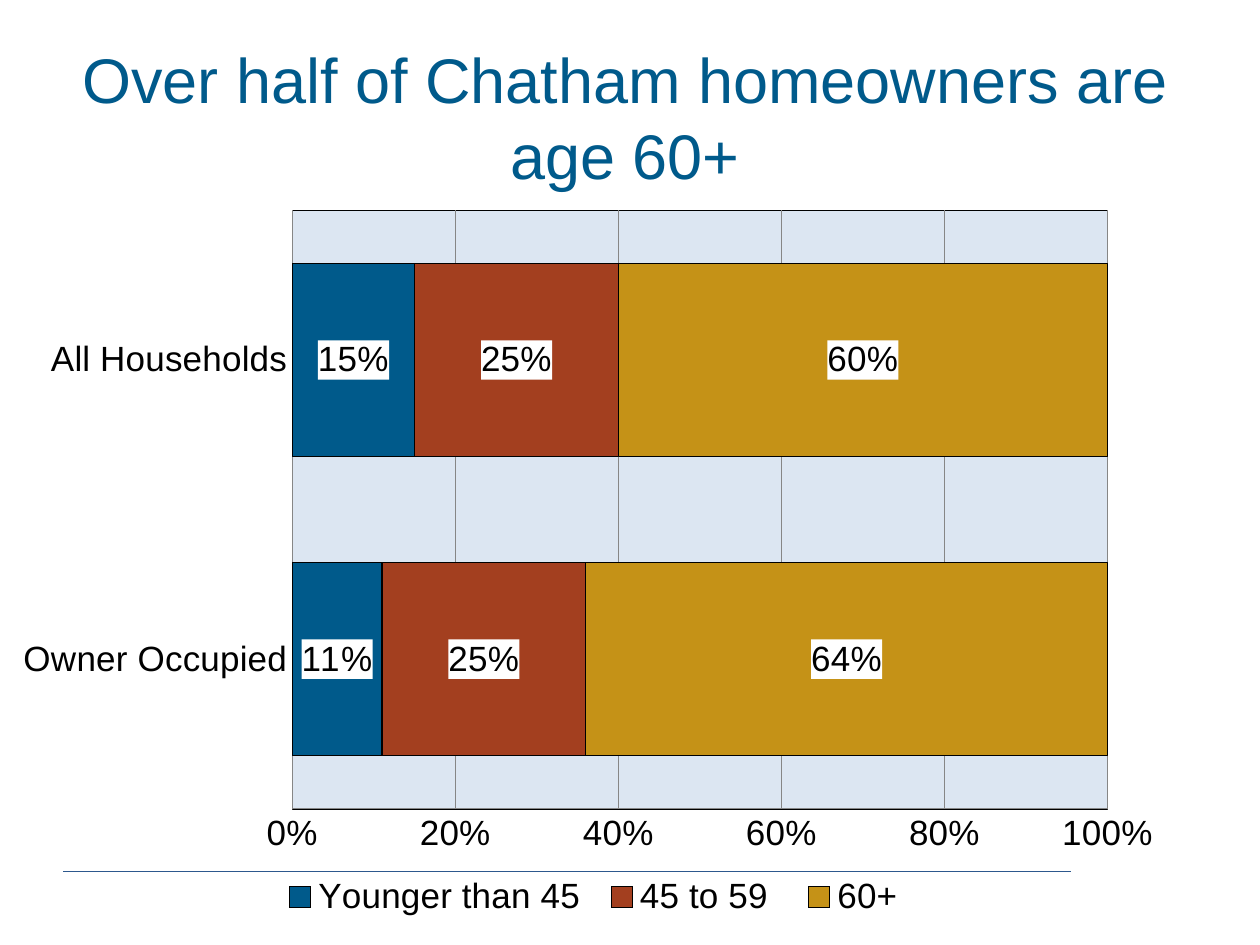
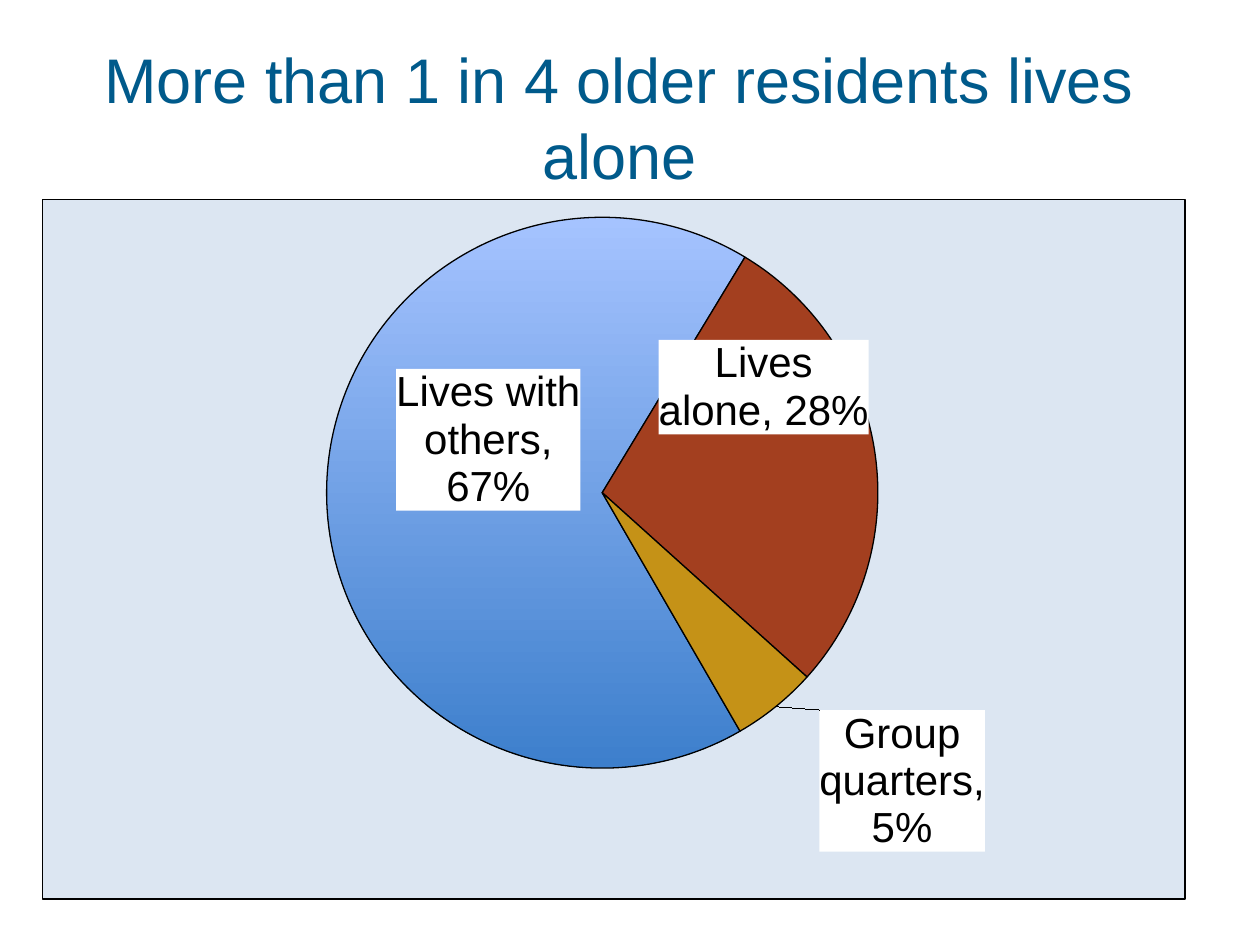
from dataclasses import dataclass

from lxml import etree
from pptx import Presentation
from pptx.chart.data import CategoryChartData
from pptx.dml.color import RGBColor
from pptx.enum.chart import XL_CHART_TYPE, XL_LABEL_POSITION, XL_LEGEND_POSITION, XL_TICK_MARK
from pptx.enum.shapes import MSO_CONNECTOR
from pptx.enum.text import MSO_ANCHOR, PP_ALIGN
from pptx.oxml import parse_xml
from pptx.oxml.ns import nsdecls, qn
from pptx.util import Inches, Pt

STACKED, PIE = XL_CHART_TYPE.BAR_STACKED_100, XL_CHART_TYPE.PIE
CENTER, OUTSIDE = XL_LABEL_POSITION.CENTER, XL_LABEL_POSITION.OUTSIDE_END
LEGEND_BOTTOM = XL_LEGEND_POSITION.BOTTOM
NO_TICK = XL_TICK_MARK.NONE
STRAIGHT = MSO_CONNECTOR.STRAIGHT
MIDDLE = MSO_ANCHOR.MIDDLE
ALIGN_CENTER = PP_ALIGN.CENTER
BAR_PLACE = (0, 1.55, 9.33, 5.83)
PIE_PLACE = (0.33, 1.58, 9.08, 5.56)


@dataclass(frozen=True)
class Theme:
    """Colours and type sizes shared by the slides."""
    font: str = "Arial"
    title: str = "005A8B"
    ink: str = "000000"
    white: str = "FFFFFF"
    panel: str = "DCE6F2"
    grid: str = "868686"
    rule: str = "2D588D"
    series: tuple = ("005A8B", "A33F1F", "C59217")
    pie_top: str = "A5C3FF"
    pie_bottom: str = "3D7FCC"
    title_size: int = 36
    chart_size: int = 20
    pie_size: int = 24
    outline: float = 0.75
    rule_width: float = 0.5


THEME = Theme()


def apply_format(target, values):
    """Set each attribute named in a dict of format values."""
    for name, value in values.items():
        setattr(target, name, value)


def style_font(font, size, color):
    """Give a font the theme face with a size and colour."""
    apply_format(font, {"name": THEME.font, "size": Pt(size), "bold": False})
    font.color.rgb = RGBColor.from_string(color)


def style_line(line, color, width=THEME.outline):
    """Give a line a colour and width."""
    line.color.rgb = RGBColor.from_string(color)
    line.width = Pt(width)


def fill_solid(fill, color):
    """Make a fill one plain colour."""
    fill.solid()
    fill.fore_color.rgb = RGBColor.from_string(color)


def panel_properties(color, border=None):
    """Return chart shape properties with a fill and an optional border."""
    line = "<a:ln><a:noFill/></a:ln>"
    if border:
        line = (f'<a:ln w="{Pt(THEME.outline)}"><a:solidFill>'
                f'<a:srgbClr val="{border}"/></a:solidFill></a:ln>')
    return parse_xml(f'<c:spPr {nsdecls("c", "a")}><a:solidFill><a:srgbClr val="{color}"/>'
                     f'</a:solidFill>{line}</c:spPr>')


def manual_layout(fractions, target=None, from_edge=True):
    """Return a manual layout element from fractions of the chart."""
    layout = etree.Element(qn("c:layout"))
    manual = etree.SubElement(layout, qn("c:manualLayout"))
    if target:
        etree.SubElement(manual, qn("c:layoutTarget"), val=target)
    if from_edge:
        for axis in "xy":
            etree.SubElement(manual, qn(f"c:{axis}Mode"), val="edge")
    for name, value in zip("xywh", fractions):
        etree.SubElement(manual, qn(f"c:{name}"), val=f"{value:.4f}")
    return layout


def chart_fractions(inner, outer):
    """Turn a place on the slide in inches into fractions of a chart's place."""
    left, top, width, height = outer
    return ((inner[0] - left) / width, (inner[1] - top) / height,
            inner[2] / width, inner[3] / height)


def add_page(deck, title, left, width):
    """Add a blank page with the shared rule and a title."""
    page = deck.slides.add_slide(deck.slide_layouts[6])
    rule = page.shapes.add_connector(STRAIGHT, Inches(0.5), Inches(6.92), Inches(8.5), Inches(6.92))
    style_line(rule.line, THEME.rule, THEME.rule_width)
    etree.SubElement(rule._element.spPr, qn("a:effectLst"))
    box = page.shapes.add_textbox(Inches(left), Inches(0.3), Inches(width), Inches(1.25))
    apply_format(box.text_frame, {"word_wrap": True, "vertical_anchor": MIDDLE})
    para = box.text_frame.paragraphs[0]
    para.alignment = ALIGN_CENTER
    span = para.add_run()
    span.text = title
    style_font(span.font, THEME.title_size, THEME.title)
    return page


def add_chart(page, kind, place, categories, series, plot_place):
    """Add a chart with theme text and a fixed plot area."""
    data = CategoryChartData(number_format="0%")
    data.categories = categories
    for name, values in series.items():
        data.add_series(name, values)
    chart = page.shapes.add_chart(kind, *map(Inches, place), data).chart
    chart.has_title = False
    style_font(chart.font, THEME.chart_size, THEME.ink)
    area = chart._chartSpace.chart.plotArea
    for layout in area.findall(qn("c:layout")):
        area.remove(layout)
    area.insert(0, manual_layout(chart_fractions(plot_place, place), "inner"))
    return chart


def style_labels(labels, size):
    """Show percentages in dark text on white."""
    style_font(labels.font, size, THEME.ink)
    apply_format(labels, {"number_format": "0%", "number_format_is_linked": False})
    labels._element.find(qn("c:txPr")).addprevious(panel_properties(THEME.white))


def style_axes(chart):
    """Format the axes and gridlines of the bar chart."""
    for axis in (chart.category_axis, chart.value_axis):
        apply_format(axis, {"major_tick_mark": NO_TICK, "minor_tick_mark": NO_TICK})
        style_line(axis.format.line, THEME.grid)
    axis = chart.value_axis
    apply_format(axis, {"minimum_scale": 0, "maximum_scale": 1, "major_unit": 0.2,
                        "has_major_gridlines": True})
    apply_format(axis.tick_labels, {"number_format": "0%", "number_format_is_linked": False})
    style_line(axis.major_gridlines.format.line, THEME.grid)


def add_bottom_legend(chart):
    """Add the age legend below the bars."""
    chart.has_legend = True
    apply_format(chart.legend, {"position": LEGEND_BOTTOM, "include_in_layout": False})
    legend = chart.legend._element
    for layout in legend.findall(qn("c:layout")):
        legend.remove(layout)
    legend.find(qn("c:legendPos")).addnext(manual_layout((0.23, 0.92, 0.55, 0.07)))


def add_age_bars(page):
    """Add stacked bars of household age by tenure."""
    ages = {"Younger than 45": (0.11, 0.15), "45 to 59 ": (0.25, 0.25), "60+": (0.64, 0.6)}
    chart = add_chart(page, STACKED, BAR_PLACE, ("Owner Occupied", "All Households"),
                      ages, (2.32, 1.67, 6.47, 4.75))
    apply_format(chart.plots[0], {"gap_width": 55, "overlap": 100})
    style_axes(chart)
    add_bottom_legend(chart)
    chart._chartSpace.chart.plotArea.append(panel_properties(THEME.panel, THEME.ink))
    for series, color in zip(chart.plots[0].series, THEME.series):
        fill_solid(series.format.fill, color)
        style_line(series.format.line, THEME.ink)
        series.data_labels.show_value = True
        style_labels(series.data_labels, THEME.chart_size)


def color_slice(fill, index):
    """Shade the first slice and colour the others plainly."""
    if index:
        fill_solid(fill, THEME.series[index])
        return
    fill.gradient()
    fill.gradient_angle = 270
    for stop, color in zip(fill.gradient_stops, (THEME.pie_top, THEME.pie_bottom)):
        stop.color.rgb = RGBColor.from_string(color)


def place_slice_labels(series, slice_labels):
    """Write each slice label and shift it by inches from its usual place."""
    for index, (text, position, _, _) in enumerate(slice_labels):
        label = series.points[index].data_label
        span = label.text_frame.paragraphs[0].add_run()
        span.text = text
        style_font(span.font, THEME.pie_size, THEME.ink)
        label.position = position
    items = series.data_labels._element.findall(qn("c:dLbl"))
    for item, (_, _, right, down) in zip(items, slice_labels):
        shift = (right / PIE_PLACE[2], down / PIE_PLACE[3])
        item.find(qn("c:idx")).addnext(manual_layout(shift, from_edge=False))
        item.find(qn("c:tx")).addnext(panel_properties(THEME.white))
        for name in ("showVal", "showCatName", "showPercent"):
            item.find(qn(f"c:{name}")).set("val", "1")


def add_living_pie(page):
    """Add the pie of living arrangements."""
    chart = add_chart(page, PIE, PIE_PLACE, ("Lives with others", "Lives alone", "Group quarters"),
                      {"Series 1": (0.67, 0.28, 0.05)}, (2.59, 1.72, 4.38, 4.38))
    chart.has_legend = False
    chart._chartSpace.chart.addnext(panel_properties(THEME.panel, THEME.ink))
    plot = chart.plots[0]
    angle = plot._element.find(qn("c:firstSliceAng"))
    if angle is None:
        angle = etree.SubElement(plot._element, qn("c:firstSliceAng"))
    angle.set("val", "150")
    series = plot.series[0]
    style_line(series.format.line, THEME.ink)
    for index in range(3):
        slice_format = series.points[index].format
        color_slice(slice_format.fill, index)
        style_line(slice_format.line, THEME.ink)
    apply_format(series.data_labels, {"show_value": True, "show_category_name": True,
                                      "show_percentage": True, "show_legend_key": False})
    style_labels(series.data_labels, THEME.pie_size)
    place_slice_labels(series, (("Lives with others, 67%", CENTER, 0.19, -0.41),
                                ("Lives alone, 28%", CENTER, 0.2, -0.68),
                                ("Group quarters, 5%", OUTSIDE, 0.31, -0.02)))


def main():
    """Build and save the deck."""
    deck = Presentation()
    apply_format(deck, {"slide_width": Inches(10), "slide_height": Inches(7.5)})
    add_age_bars(add_page(deck, "Over half of Chatham homeowners are age 60+", 0.25, 9.42))
    add_living_pie(add_page(deck, "More than 1 in 4 older residents lives alone", 0.33, 9.17))
    deck.save("out.pptx")


if __name__ == "__main__":
    main()
